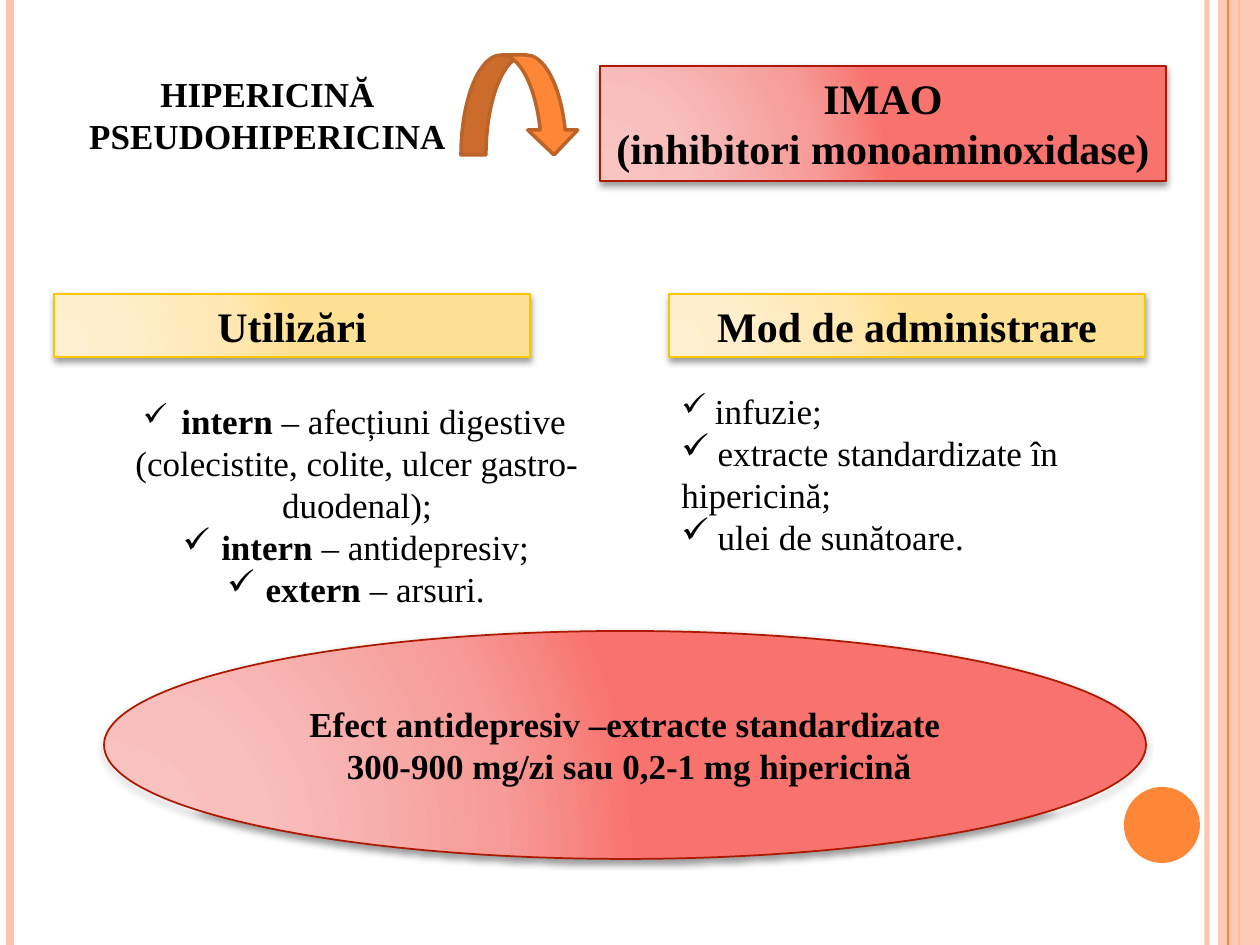
from lxml import etree
from pptx import Presentation
from pptx.dml.color import RGBColor
from pptx.enum.shapes import MSO_CONNECTOR, MSO_SHAPE
from pptx.enum.text import MSO_ANCHOR, MSO_AUTO_SIZE, PP_ALIGN
from pptx.oxml import parse_xml
from pptx.oxml.ns import nsdecls, qn
from pptx.util import Emu, Pt

RECT, OVAL, ARROW = MSO_SHAPE.RECTANGLE, MSO_SHAPE.OVAL, MSO_SHAPE.CURVED_DOWN_ARROW
STRAIGHT = MSO_CONNECTOR.STRAIGHT
TOP, MIDDLE = MSO_ANCHOR.TOP, MSO_ANCHOR.MIDDLE
LEFT, CENTER = PP_ALIGN.LEFT, PP_ALIGN.CENTER
GROW, FIXED = MSO_AUTO_SIZE.SHAPE_TO_FIT_TEXT, MSO_AUTO_SIZE.NONE

BLACK = RGBColor(0x00, 0x00, 0x00)
PEACH = RGBColor(0xFE, 0xC3, 0xAE)
ORANGE = RGBColor(0xFE, 0x86, 0x37)
RUST = RGBColor(0xBC, 0x63, 0x29)
CRIMSON = RGBColor(0xAC, 0x18, 0x00)
GOLD = RGBColor(0xF8, 0xC7, 0x00)

STOPS = (0, 30, 75, 100)
RED_PANEL = {"line": CRIMSON, "glow": [
    RGBColor(0xF8, 0xC5, 0xC3), RGBColor(0xF8, 0xBF, 0xBD),
    RGBColor(0xF6, 0x9B, 0x98), RGBColor(0xF8, 0x73, 0x6E)]}
YELLOW_PANEL = {"line": GOLD, "glow": [
    RGBColor(0xFF, 0xF0, 0xD1), RGBColor(0xFF, 0xEF, 0xCC),
    RGBColor(0xFF, 0xE7, 0xB1), RGBColor(0xFF, 0xE1, 0x93)]}

SERIF, SCHOOL = "Times New Roman", "TeX Gyre Schola"
PX = 914400 / 126
WIDTH, HEIGHT = 1260, 945

BULLET_LEAD = {"size": Pt(18), "name": SCHOOL}
BODY = {"size": Pt(20), "name": SERIF, "bold": False}
STRONG = {"size": Pt(20), "name": SERIF, "bold": True}
HEADING = {"size": Pt(24), "name": SERIF, "bold": True}

COMPOUNDS = [[("HIPERICINĂ", STRONG)], [("PSEUDOHIPERICINA", STRONG)]]
INHIBITORS = [[("IMAO", HEADING)], [("(inhibitori monoaminoxidase) ", HEADING)]]
EFFECT = [[("Efect antidepresiv –extracte standardizate", STRONG)],
          [(" 300-900 mg/zi sau 0,2-1 mg hipericină", STRONG)]]
USES = [
    [(" ", BULLET_LEAD), ("intern", STRONG),
     (" – afecțiuni digestive (colecistite, colite, ulcer gastro-duodenal);", BODY)],
    [(" ", BODY), ("intern ", STRONG), ("– antidepresiv;", BODY)],
    [(" ", BODY), ("extern ", STRONG), ("– arsuri.", BODY)],
]
ADMINISTRATION = [
    [(" ", BULLET_LEAD), ("infuzie;", BODY)],
    [(" extracte standardizate în hipericină;", BODY)],
    [(" ulei de sunătoare.", BODY)],
]
SECTIONS = [("Utilizări", 54), ("Mod de administrare", 669)]
PANELS = [
    (RECT, (600, 66, 566, 115), RED_PANEL, INHIBITORS, TOP, GROW),
    *[(RECT, (left, 294, 476, 63), YELLOW_PANEL, [[(name, HEADING)]], TOP, GROW)
      for name, left in SECTIONS],
    (OVAL, (104, 631, 1042, 228), RED_PANEL, EFFECT, MIDDLE, FIXED),
]
TEXTS = [
    ((64, 66, 407, 97), COMPOUNDS, CENTER, False),
    ((64, 393, 586, 224), USES, CENTER, True),
    ((669, 383, 486, 183), ADMINISTRATION, LEFT, True),
]
RULES_BEHIND = [(1207, PEACH, 3, 93), (10, PEACH, 4.5, 100), (1239, ORANGE, 1.5, 100)]
RULES_FRONT = [(1228, ORANGE, 0.75, 100)]


def emu(lengths):
    return [Emu(round(n * PX)) for n in lengths]


def set_opacity(element, percent):
    color = element.find(".//" + qn("a:srgbClr"))
    etree.SubElement(color, qn("a:alpha")).set("val", str(percent * 1000))


def add_rules(shapes, rules):
    for x, color, width, opacity in rules:
        rule = shapes.add_connector(STRAIGHT, *emu((x, 0, x, HEIGHT)))
        rule.line.color.rgb = color
        rule.line.width = Pt(width)
        set_opacity(rule.line._ln, opacity)
        etree.SubElement(rule._element.spPr, qn("a:effectLst"))


def add_plain(shapes, kind, box, fill, line=None):
    shape = shapes.add_shape(kind, *emu(box))
    shape.shadow.inherit = False
    shape.fill.solid()
    shape.fill.fore_color.rgb = fill
    if line is None:
        shape.line.fill.background()
    else:
        shape.line.color.rgb = line
        shape.line.width = Pt(2)
    return shape


def write(frame, paragraphs, align, anchor, fit, checked=False):
    frame.word_wrap = True
    frame.auto_size = fit
    frame.vertical_anchor = anchor
    for i, runs in enumerate(paragraphs):
        paragraph = frame.add_paragraph() if i else frame.paragraphs[0]
        paragraph.alignment = align
        if checked:
            etree.SubElement(paragraph._p.get_or_add_pPr(), qn("a:buChar")).set("char", "✓")
        for text, style in runs:
            run = paragraph.add_run()
            run.text = text
            run.font.color.rgb = BLACK
            for key, value in style.items():
                setattr(run.font, key, value)


def add_panel(shapes, kind, box, look, paragraphs, anchor, fit):
    panel = shapes.add_shape(kind, *emu(box))
    panel.line.color.rgb = look["line"]
    panel.line.width = Pt(1)
    stops = "".join(
        f'<a:gs pos="{pos * 1000}"><a:srgbClr val="{color}"/></a:gs>'
        for pos, color in zip(STOPS, look["glow"]))
    properties = panel._element.spPr
    properties.find(qn("a:prstGeom")).addnext(parse_xml(
        f'<a:gradFill {nsdecls("a")} rotWithShape="1"><a:gsLst>{stops}</a:gsLst>'
        '<a:path path="circle"><a:fillToRect l="5000" t="100000" r="120000" b="10000"/>'
        '</a:path></a:gradFill>'))
    panel.shadow.inherit = False
    properties.find(qn("a:effectLst")).append(parse_xml(
        f'<a:outerShdw {nsdecls("a")} blurRad="{Pt(4)}" dist="{Pt(2)}" dir="5400000" '
        'rotWithShape="0"><a:srgbClr val="000000"><a:alpha val="40000"/></a:srgbClr>'
        '</a:outerShdw>'))
    write(panel.text_frame, paragraphs, CENTER, anchor, fit)


def main():
    deck = Presentation()
    deck.slide_width, deck.slide_height = emu((WIDTH, HEIGHT))
    shapes = deck.slides.add_slide(deck.slide_layouts[6]).shapes

    add_rules(shapes, RULES_BEHIND)
    band = add_plain(shapes, RECT, (1218, 0, 42, HEIGHT), PEACH)
    set_opacity(band._element.spPr, 87)
    add_rules(shapes, RULES_FRONT)
    add_plain(shapes, OVAL, (1124, 787, 76, 76), ORANGE)

    for panel in PANELS:
        add_panel(shapes, *panel)
    for box, paragraphs, align, checked in TEXTS:
        frame = shapes.add_textbox(*emu(box)).text_frame
        write(frame, paragraphs, align, TOP, GROW, checked)
    add_plain(shapes, ARROW, (461, 55, 118, 100), ORANGE, RUST)

    deck.save("out.pptx")


if __name__ == "__main__":
    main()
